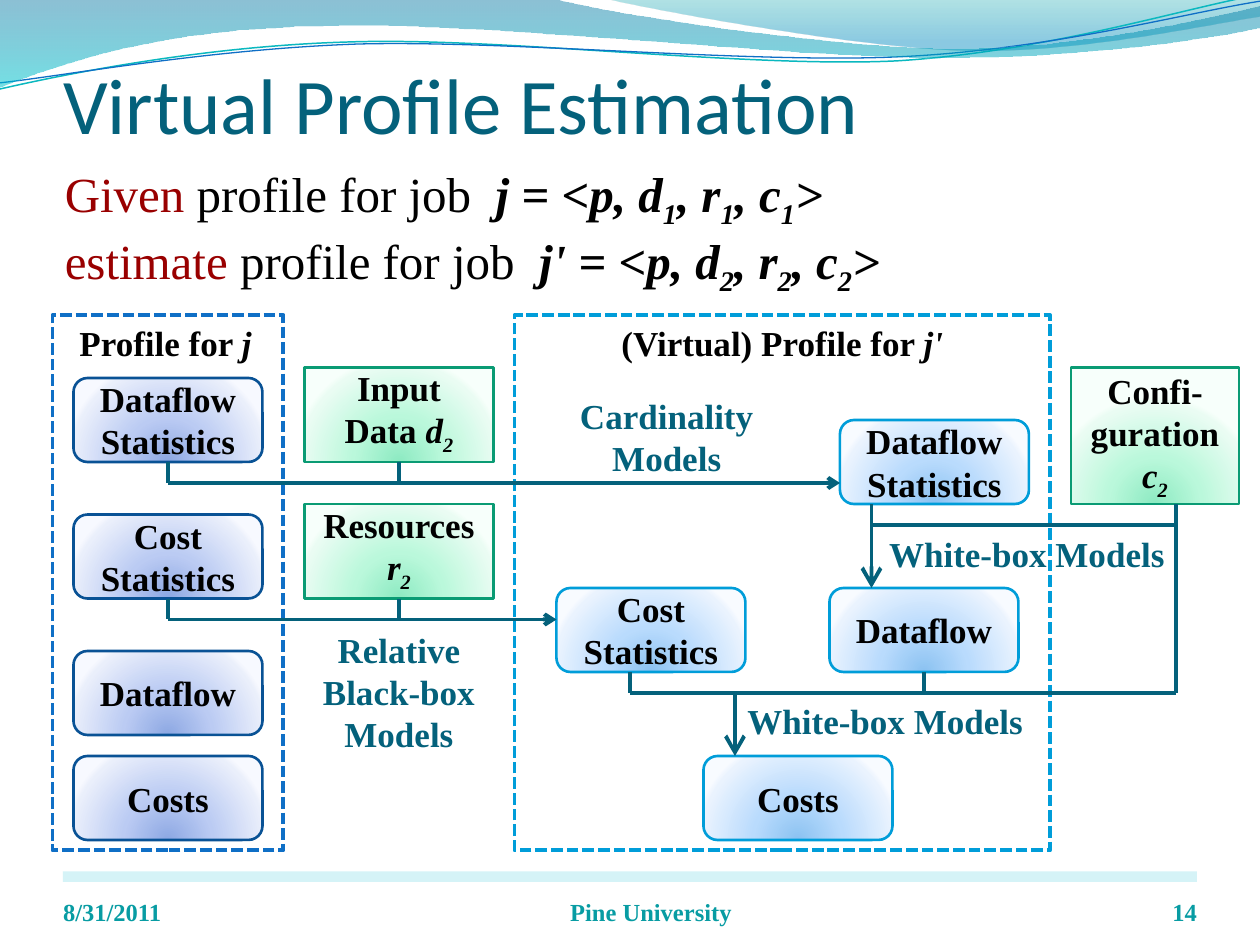
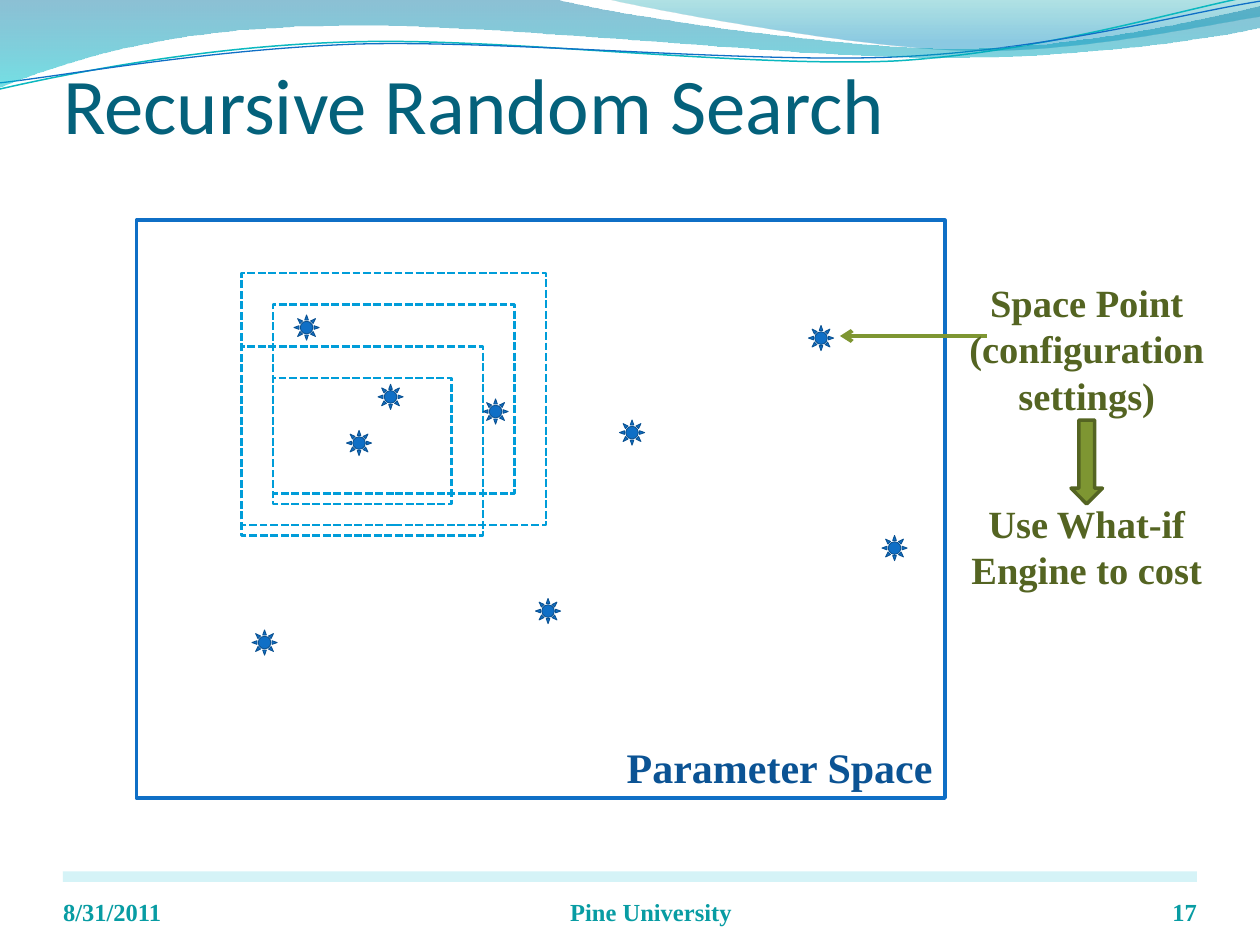
from lxml.etree import SubElement
from pptx import Presentation
from pptx.dml.color import RGBColor
from pptx.enum.dml import MSO_LINE
from pptx.enum.shapes import MSO_CONNECTOR, MSO_SHAPE
from pptx.enum.text import MSO_ANCHOR, PP_ALIGN
from pptx.oxml import parse_xml
from pptx.oxml.ns import nsdecls, qn
from pptx.util import Pt

PX = 7620
SERIF = "Times New Roman"

COLORS = {
    "black": "000000", "white": "FFFFFF", "red": "990000", "title": "04617B",
    "footer": "089CA3", "rule": "B3EAF2", "teal": "0AB8BF", "blue": "0F6FC6",
    "navy": "095295", "sky": "009DD9", "green": "0A9B74", "space": "0B5394",
    "sun": "0B5292", "olive": "7E9632", "dark olive": "546422",
    "wave teal": "00A1A9", "wave blue": "008BBF", "wave deep": "0074A1", "wave aqua": "00C6CF",
}
GLOWS = {
    "navy": ("8DA8E3", "BBCBF3", "EAEFFB", "F7F9FF"),
    "sky": ("8BC2F1", "B9DBFD", "EAF3FE", "F8FBFF"),
    "green": ("8DEAC2", "BAF8DB", "EAFCF3", "F7FFFB"),
}
GLOW_STOPS = (0, 43, 93, 100)

RIGHT_WAVE = [[(575, -1)], [(611, 8), (818, 46), (923, 48)],
              [(1027, 50), (1153, 23), (1200, 16)], [(1200, 0)]]
LEFT_WAVE = [[(0, -1)], [(528, -1)], [(571, 12), (797, 46), (910, 46)],
             [(1024, 46), (1150, 18), (1200, 6)], [(1201, 26)],
             [(1180, 32), (1044, 55), (895, 55)], [(744, 55), (458, 20), (308, 25)],
             [(155, 26), (55, 61), (-1, 83)]]
TEAL_STRAND = [[(-1, 85)], [(56, 72), (190, 44), (332, 40)],
               [(475, 35), (710, 65), (854, 58)], [(998, 49), (1127, 8), (1199, -5)]]
BLUE_STRAND = [[(-1, 79)], [(56, 73), (197, 47), (340, 42)],
               [(484, 38), (716, 61), (859, 54)], [(1003, 47), (1130, 12), (1201, 1)]]

FOOTER_DATE = "8/31/2011"
FOOTER_SCHOOL = "Pine University"


def job(lead, name, number):
    parts = [(lead, "r"), (" profile for job", ""), (" ", "w"), (name + " = <p, d", "bi")]
    for separator in (", r", ", c", ">"):
        parts += [(number, "bis"), (separator, "bi")]
    return parts


GIVEN_AND_ESTIMATE = [job("Given", "j", "1"), job("estimate", "j'", "2")]

STATISTICS = {"Dataflow": ["Dataflow", "Statistics"], "Cost": ["Cost", "Statistics"]}
PANELS = [
    ((490, 300, 510, 510), "sky", [[("(Virtual) Profile for ", "b"), ("j'", "bi")]], 12),
    ((50, 300, 220, 510), "blue", [[("Profile for ", "b"), ("j", "bi")]], 7),
]
PROFILE_PARTS = [
    ((70, 360), "navy", STATISTICS["Dataflow"]),
    ((70, 490), "navy", STATISTICS["Cost"]),
    ((70, 620), "navy", ["Dataflow"]),
    ((70, 720), "navy", ["Costs"]),
    ((800, 400), "sky", STATISTICS["Dataflow"]),
    ((530, 560), "sky", STATISTICS["Cost"]),
    ((790, 560), "sky", ["Dataflow"]),
    ((670, 720), "sky", ["Costs"]),
]
NEW_INPUTS = [
    ((290, 350, 180, 90), ["Input", [("Data ", "b"), ("d", "bi"), ("2", "bis")]], (12, 0, 12, 6)),
    ((290, 480, 180, 90), ["Resources", [("r", "bi"), ("2", "bis")]], (0, 0, 0, 6)),
    ((1020, 350, 160, 130), [[("Confi-guration ", "b"), ("c", "bi"), ("2", "bis")]],
     (12, 6, 12, 6)),
]
STEMS = [
    (160, 440, 160, 460), (380, 440, 380, 460),
    (160, 570, 160, 590), (380, 570, 380, 590),
    (1120, 480, 1120, 500), (1120, 500, 830, 500),
    (1120, 480, 1120, 660), (1120, 660, 600, 660),
    (600, 640, 600, 660), (880, 640, 880, 660),
]
GAP = (450, 584, 450, 596)
FLOWS_ACROSS = [(800, 460, 160, 460), (530, 590, 160, 590)]
FLOWS_DOWN = [(830, 480, 830, 560), (700, 660, 700, 720)]
MODELS = [
    ((490, 370, 290, 93), ["Cardinality", "Models"], PP_ALIGN.CENTER),
    ((260, 593, 240, 133), ["Relative", "Black-box", "Models"], PP_ALIGN.CENTER),
    ((830, 501, 296, 53), ["White-box Models"], PP_ALIGN.CENTER),
    ((700, 660, 300, 53), ["White-box Models"], PP_ALIGN.LEFT),
]

PARAMETER_SPACE = (130, 210, 770, 550)
SEARCH_REGIONS = [(230, 260, 290, 240), (260, 290, 230, 180),
                  (230, 330, 230, 180), (260, 360, 170, 120)]
SPACE_POINTS = [(330, 410), (360, 366), (770, 310), (590, 400), (240, 600),
                (510, 570), (840, 510), (280, 300), (460, 380)]
POINT_SIZE = 24
CALLOUTS = [
    ((900, 260, 270, 145), ["Space Point", "(configuration", "settings)"]),
    ((910, 470, 250, 101), ["Use What-if Engine to cost"]),
]


def emu(values):
    return [round(value * PX) for value in values]


def rgb(name):
    return RGBColor.from_string(COLORS[name])


def add_gradient(shape, stops, direction):
    stop_xml = "".join(
        f'<a:gs pos="{pos * 1000}"><a:srgbClr val="{color}">'
        f'<a:alpha val="{alpha * 1000}"/></a:srgbClr></a:gs>'
        for pos, color, alpha in stops)
    shape.fill.background()
    properties = shape.element.spPr
    properties.replace(properties.find(qn("a:noFill")), parse_xml(
        f'<a:gradFill {nsdecls("a")} rotWithShape="1"><a:gsLst>{stop_xml}</a:gsLst>'
        f'{direction}</a:gradFill>'))


def add_glow(shape, name):
    stops = [(pos, color, 100) for pos, color in zip(GLOW_STOPS, GLOWS[name])]
    add_gradient(shape, stops, '<a:path path="circle"><a:fillToRect l="50000" t="130000" '
                               'r="50000" b="-30000"/></a:path>')


def style_line(shape, color, width, dashed=False):
    shape.line.color.rgb = rgb(color)
    shape.line.width = Pt(width)
    if dashed:
        shape.line.dash_style = MSO_LINE.SQUARE_DOT


def add_figure(slide, preset, box, fill=None, line=None, width=1.5, dashed=False):
    figure = slide.shapes.add_shape(preset, *emu(box))
    figure.shadow.inherit = False
    if fill:
        figure.fill.solid()
        figure.fill.fore_color.rgb = rgb(fill)
    else:
        figure.fill.background()
    if line:
        style_line(figure, line, width, dashed)
    else:
        figure.line.fill.background()
    return figure


def write(shape, paragraphs, size, color="black", align=PP_ALIGN.CENTER,
          anchor=MSO_ANCHOR.TOP, insets=(12, 6, 12, 6), font=SERIF, style="b"):
    frame = shape.text_frame
    frame.word_wrap = True
    frame.vertical_anchor = anchor
    (frame.margin_left, frame.margin_top,
     frame.margin_right, frame.margin_bottom) = emu(insets)
    for index, content in enumerate(paragraphs):
        paragraph = frame.add_paragraph() if index else frame.paragraphs[0]
        paragraph.alignment = align
        for words, marks in [(content, style)] if isinstance(content, str) else content:
            run = paragraph.add_run()
            run.text = words
            run.font.name = font
            run.font.size = Pt(size)
            run.font.bold = "b" in marks
            run.font.italic = "i" in marks
            run.font.color.rgb = rgb("red" if "r" in marks else color)
            properties = list(shape.element.iter(qn("a:rPr")))[-1]
            if "s" in marks:
                properties.set("baseline", "-25000")
            if "w" in marks:
                properties.set("spc", "700")


def add_label(slide, box, paragraphs, size, **options):
    write(slide.shapes.add_textbox(*emu(box)), paragraphs, size, **options)


def add_link(slide, ends, color="title", width=2.25, arrow=None, reach="med"):
    link = slide.shapes.add_connector(MSO_CONNECTOR.STRAIGHT, *emu(ends))
    style_line(link, color, width)
    properties = link.element.spPr
    if arrow:
        SubElement(properties.find(qn("a:ln")), qn("a:" + arrow),
                   type="arrow", w=reach, len=reach)
    SubElement(properties, qn("a:effectLst"))


def add_outline(slide, outline, closed):
    ends = [emu(segment[-1]) for segment in outline]
    builder = slide.shapes.build_freeform(*ends[0])
    builder.add_line_segments(ends[1:], close=closed)
    figure = builder.convert_to_shape()
    figure.shadow.inherit = False
    straight = list(figure.element.iter(qn("a:lnTo")))
    for line, segment in zip(straight, outline[1:]):
        if len(segment) == 3:
            curve = SubElement(line.getparent(), qn("a:cubicBezTo"))
            for x, y in map(emu, segment):
                SubElement(curve, qn("a:pt"), x=str(x - figure.left), y=str(y - figure.top))
            line.getparent().replace(line, curve)
    return figure


def add_wave(slide, outline, stops):
    wave = add_outline(slide, outline, True)
    wave.line.fill.background()
    add_gradient(wave, [(pos, COLORS[name], alpha) for pos, name, alpha in stops],
                 '<a:lin ang="5400000" scaled="1"/>')


def add_strand(slide, outline, color, width):
    strand = add_outline(slide, outline, False)
    strand.fill.background()
    style_line(strand, color, width)


def decorate_layout(layout, slide):
    existing = list(slide.shapes)
    rule = add_figure(slide, MSO_SHAPE.RECTANGLE, (60, 830, 1080, 10), "rule")
    SubElement(next(rule.element.spPr.iter(qn("a:srgbClr"))), qn("a:alpha"), val="55000")
    add_wave(slide, RIGHT_WAVE, [(0, "wave teal", 30), (80, "wave blue", 45)])
    add_strand(slide, TEAL_STRAND, "teal", 0.85)
    add_strand(slide, BLUE_STRAND, "blue", 0.75)
    add_wave(slide, LEFT_WAVE, [(0, "wave deep", 45), (100, "wave aqua", 55)])
    for figure in list(slide.shapes)[len(existing):]:
        layout.shapes.element.append(figure.element)


def start_slide(deck, layout, heading, number):
    slide = deck.slides.add_slide(layout)
    title = slide.shapes.title
    title.left, title.top, title.width, title.height = emu((60, 40, 1080, 110))
    write(title, [heading], 45, "title", PP_ALIGN.LEFT, MSO_ANCHOR.MIDDLE,
          (0, 6, 0, 0), "Calibri", "")
    for left, width, words, align in (
            (60, 280, FOOTER_DATE, PP_ALIGN.LEFT),
            (400, 440, FOOTER_SCHOOL, PP_ALIGN.CENTER),
            (1040, 100, number, PP_ALIGN.RIGHT)):
        add_label(slide, (left, 834, width, 48), [words], 14, color="footer", align=align,
                  anchor=MSO_ANCHOR.BOTTOM, insets=(0, 0, 0, 0))
    return slide


def draw_profile_estimation(slide):
    add_label(slide, (50, 150, 1090, 125), GIVEN_AND_ESTIMATE, 28, align=PP_ALIGN.LEFT)
    for box, color, heading, inset in PANELS:
        add_figure(slide, MSO_SHAPE.RECTANGLE, box, line=color, width=2.25, dashed=True)
        add_label(slide, (*box[:3], 53), heading, 20, insets=(inset, 6, 12, 6))
    for corner, color, words in PROFILE_PARTS:
        part = add_figure(slide, MSO_SHAPE.ROUNDED_RECTANGLE, (*corner, 180, 80), line=color)
        add_glow(part, color)
        write(part, words, 20, anchor=MSO_ANCHOR.MIDDLE)
    for box, words, insets in NEW_INPUTS:
        new_input = add_figure(slide, MSO_SHAPE.RECTANGLE, box, line="green")
        add_glow(new_input, "green")
        write(new_input, words, 20, anchor=MSO_ANCHOR.MIDDLE, insets=insets)
    add_link(slide, GAP, "white", 6)
    for ends in STEMS:
        add_link(slide, ends)
    for ends in FLOWS_ACROSS:
        add_link(slide, ends, arrow="headEnd")
    for ends in FLOWS_DOWN:
        add_link(slide, ends, arrow="tailEnd", reach="lg")
    for box, words, align in MODELS:
        add_label(slide, box, words, 20, color="title", align=align)


def draw_random_search(slide):
    add_figure(slide, MSO_SHAPE.RECTANGLE, PARAMETER_SPACE, "white", "blue", 2.25)
    add_label(slide, (530, 700, 370, 60), ["Parameter Space"], 24,
              color="space", align=PP_ALIGN.RIGHT)
    for region in SEARCH_REGIONS:
        add_figure(slide, MSO_SHAPE.RECTANGLE, region, line="sky", dashed=True)
    for corner in SPACE_POINTS:
        add_figure(slide, MSO_SHAPE.SUN, (*corner, POINT_SIZE, POINT_SIZE), "blue", "sun", 0.5)
    add_link(slide, (940, 320, 800, 320), "olive", arrow="tailEnd")
    for box, words in CALLOUTS:
        add_label(slide, box, words, 22, color="dark olive")
    add_figure(slide, MSO_SHAPE.DOWN_ARROW, (1020, 400, 30, 80), "olive", "dark olive", 2)


def main():
    deck = Presentation()
    deck.slide_width, deck.slide_height = emu((1200, 900))
    layout = deck.slide_layouts.get_by_name("Title Only")
    estimation = start_slide(deck, layout, "Virtual Profile Estimation", "14")
    decorate_layout(layout, estimation)
    draw_profile_estimation(estimation)
    draw_random_search(start_slide(deck, layout, "Recursive Random Search", "17"))
    deck.save("out.pptx")


if __name__ == "__main__":
    main()
